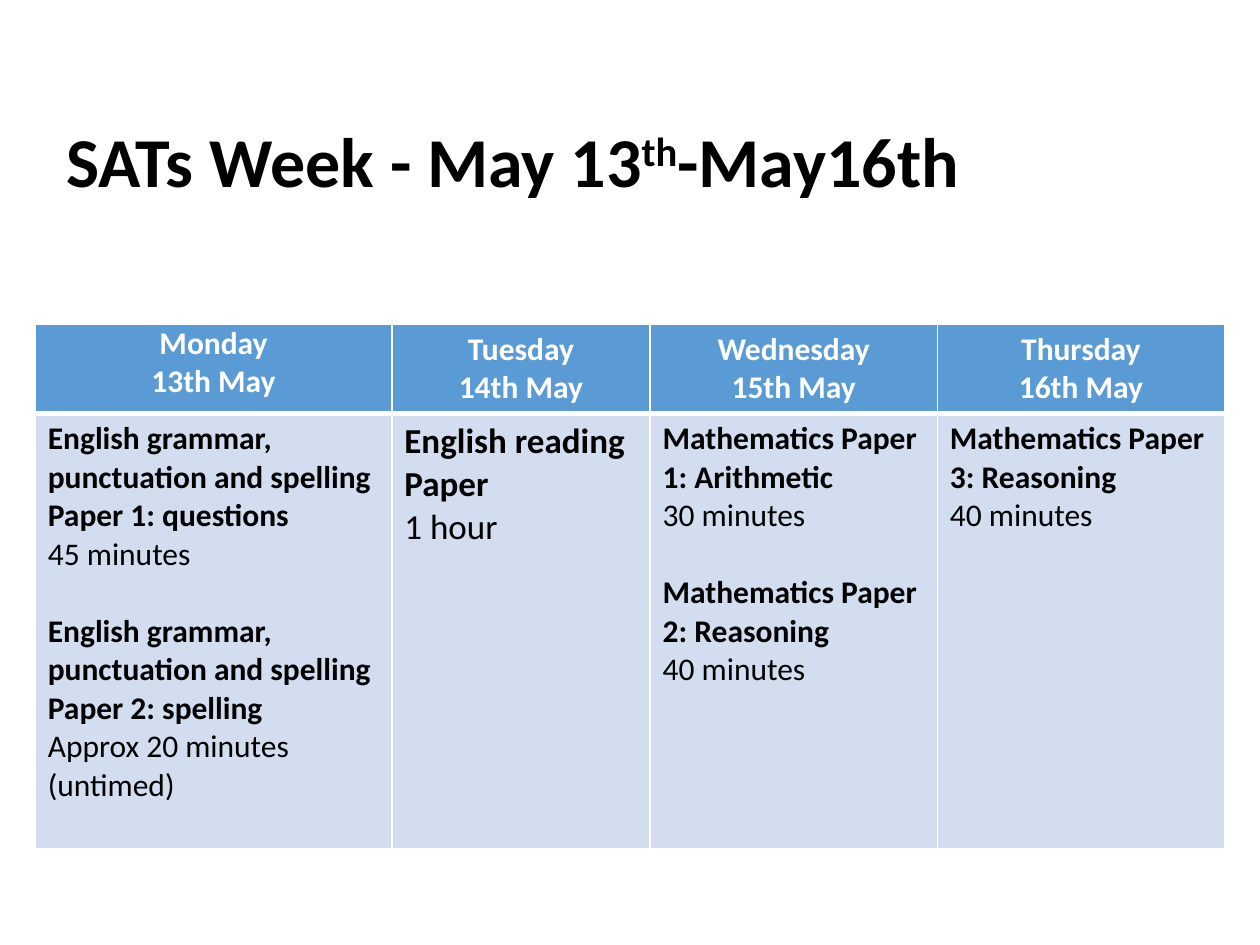
from lxml.etree import SubElement
from pptx import Presentation
from pptx.dml.color import RGBColor
from pptx.enum.text import MSO_ANCHOR, MSO_AUTO_SIZE, PP_ALIGN
from pptx.oxml.ns import qn
from pptx.util import Inches, Pt

COLORS = {"text": "000000", "header": "5B9BD5", "body": "D2DEEF", "white": "FFFFFF"}
TITLE = [("SATs Week - May 13", 0), ("th", 30), ("-May16th", 0)]
# Each day: name, date, column width in inches, text size, papers with their durations
DAYS = [
    ("Monday", "13th May", 2.83, 18, [
        ("English grammar, punctuation and spelling Paper 1: questions", "45 minutes"),
        ("English grammar, punctuation and spelling Paper 2: spelling",
         "Approx 20 minutes (untimed)")]),
    ("Tuesday", "14th May", 2.05, 20, [("English reading Paper", "1 hour")]),
    ("Wednesday", "15th May", 2.28, 18, [
        ("Mathematics Paper 1: Arithmetic", "30 minutes"),
        ("Mathematics Paper 2: Reasoning", "40 minutes")]),
    ("Thursday", "16th May", 2.28, 18, [
        ("Mathematics Paper 3: Reasoning", "40 minutes")]),
]
ROW_HEIGHTS = (0.71, 3.45)


class Deck:
    font = "Calibri"
    paper_gap = Pt(22)

    def __init__(self, width, height):
        self.prs = Presentation()
        self.prs.slide_width, self.prs.slide_height = Inches(width), Inches(height)
        self.slide = self.prs.slides.add_slide(self.prs.slide_layouts[5])

    def place(self, x, y, w, h):
        """Turn shares of the slide's size into lengths."""
        width, height = self.prs.slide_width, self.prs.slide_height
        return int(x * width), int(y * height), int(w * width), int(h * height)

    def style(self, run, size, color, bold):
        run.font.name, run.font.size, run.font.bold = self.font, Pt(size), bold
        run.font.color.rgb = RGBColor.from_string(COLORS[color])

    def title(self, parts, box):
        heading = self.slide.shapes.title
        heading.left, heading.top, heading.width, heading.height = self.place(*box)
        frame = heading.text_frame
        frame.auto_size = MSO_AUTO_SIZE.NONE
        frame.vertical_anchor = MSO_ANCHOR.MIDDLE
        line = frame.paragraphs[0]
        line.alignment, line.line_spacing = PP_ALIGN.LEFT, 0.9
        for text, raised in parts:
            run = line.add_run()
            run.text = text
            self.style(run, 40, "text", True)
            if raised:
                run._r.get_or_add_rPr().set("baseline", str(raised * 1000))

    def borders(self, cell, bottom):
        properties = cell._tc.get_or_add_tcPr()
        for place, (side, points) in enumerate(
                [("L", 1), ("R", 1), ("T", 1), ("B", bottom)]):
            line = SubElement(properties, qn(f"a:ln{side}"), w=str(Pt(points)))
            fill = SubElement(line, qn("a:solidFill"))
            SubElement(fill, qn("a:srgbClr"), val=COLORS["white"])
            properties.insert(place, line)

    def cell(self, cell, lines, size, fill, color, align, bottom=1):
        """Fill a cell with (text, bold, space before) lines."""
        cell.fill.solid()
        cell.fill.fore_color.rgb = RGBColor.from_string(COLORS[fill])
        self.borders(cell, bottom)
        cell.text_frame.text = "\n".join(text for text, _, _ in lines)
        for paragraph, (_, bold, gap) in zip(cell.text_frame.paragraphs, lines):
            paragraph.alignment, paragraph.space_before = align, gap
            self.style(paragraph.runs[0], size, color, bold)

    def timetable(self, days, heights, box):
        table = self.slide.shapes.add_table(2, len(days), *self.place(*box)).table
        for row, height in zip(table.rows, heights):
            row.height = Inches(height)
        for col, (name, date, width, size, papers) in enumerate(days):
            table.columns[col].width = Inches(width)
            self.cell(table.cell(0, col), [(name, True, 0), (date, True, 0)],
                      18, "header", "white", PP_ALIGN.CENTER, bottom=3)
            lines = []
            for paper, duration in papers:
                lines.append((paper, True, self.paper_gap if lines else 0))
                lines.append((duration, False, 0))
            self.cell(table.cell(1, col), lines, size, "body", "text", PP_ALIGN.LEFT)
        monday = table.cell(0, 0)
        monday.margin_left = monday.margin_right = 0
        monday.margin_top = monday.margin_bottom = 0


def main():
    deck = Deck(10, 7.5)
    deck.title(TITLE, (0.043, 0.101, 0.9, 0.147))
    deck.timetable(DAYS, ROW_HEIGHTS, (0.028, 0.343, 0.944, 0.555))
    deck.prs.save("out.pptx")


if __name__ == "__main__":
    main()
